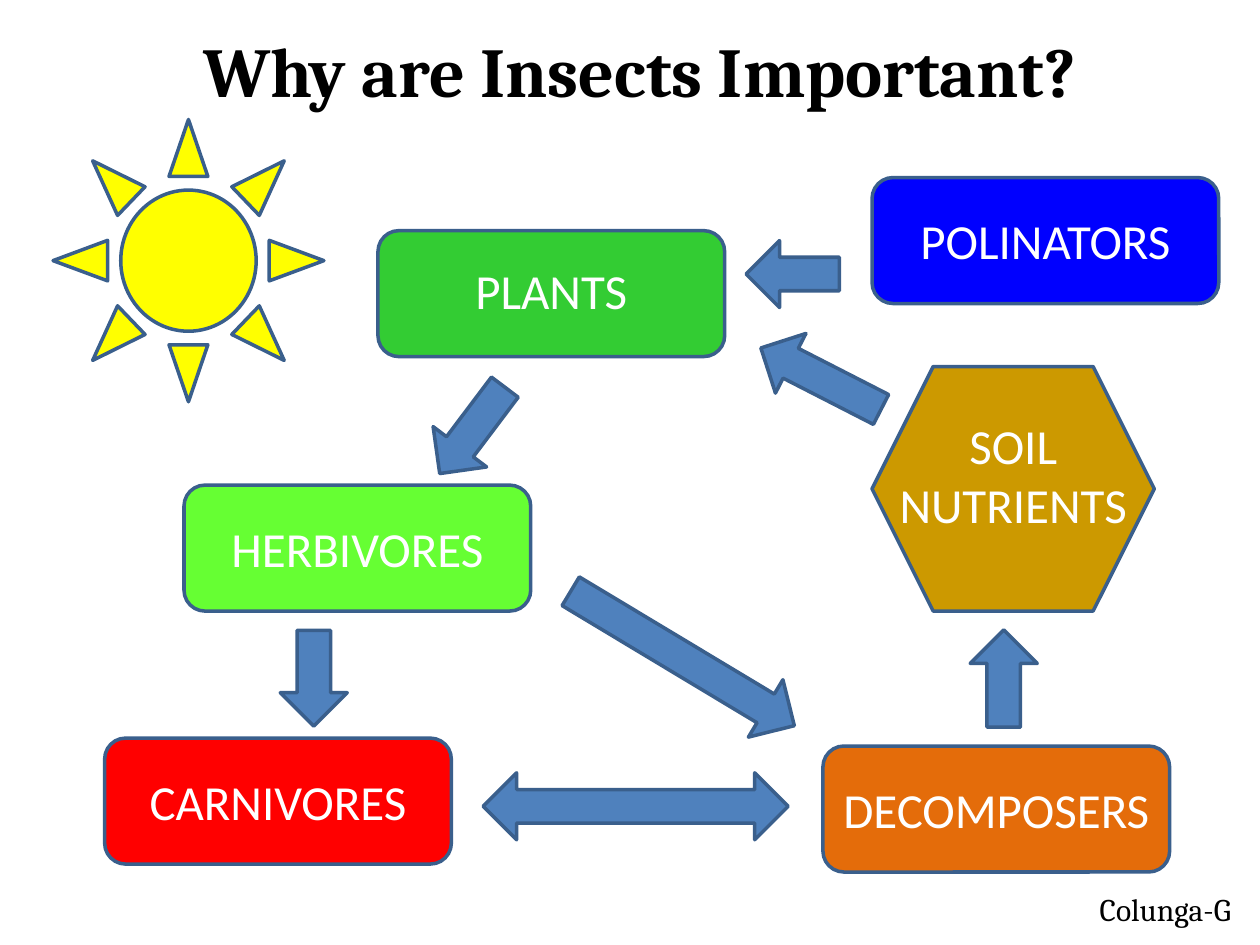
from dataclasses import dataclass

import pptx
import pptx.dml.color
import pptx.enum.shapes
import pptx.enum.text
import pptx.util

Cm = pptx.util.Cm
Pt = pptx.util.Pt
RGBColor = pptx.dml.color.RGBColor
MSO_SHAPE = pptx.enum.shapes.MSO_SHAPE
MSO_ANCHOR = pptx.enum.text.MSO_ANCHOR
PP_ALIGN = pptx.enum.text.PP_ALIGN

BLACK = RGBColor(0x00, 0x00, 0x00)
WHITE = RGBColor(0xFF, 0xFF, 0xFF)
OUTLINE = RGBColor(0x3A, 0x5F, 0x8C)
ARROW_BLUE = RGBColor(0x4F, 0x81, 0xBD)
YELLOW = RGBColor(0xFF, 0xFF, 0x00)
GREEN = RGBColor(0x33, 0xCC, 0x33)
LIME = RGBColor(0x66, 0xFF, 0x33)
RED = RGBColor(0xFF, 0x00, 0x00)
BLUE = RGBColor(0x00, 0x00, 0xFF)
ORANGE = RGBColor(0xE4, 0x6C, 0x0A)
OCHRE = RGBColor(0xCC, 0x99, 0x00)

ARROW_THICKNESS = 1.35


@dataclass
class Node:
    """A labelled part of the food web; lengths in cm."""
    label: str
    left: float
    top: float
    fill: RGBColor
    kind: MSO_SHAPE = MSO_SHAPE.ROUNDED_RECTANGLE
    width: float = 6.99
    height: float = 2.54
    lift: float = 0  # how far the label sits above the middle


@dataclass
class Arrow:
    kind: MSO_SHAPE
    left: float
    top: float
    width: float
    height: float = ARROW_THICKNESS
    rotation: float = 0


NODES = [
    Node("PLANTS", 7.62, 4.65, GREEN, lift=0.08),
    Node("SOIL\nNUTRIENTS", 17.58, 7.39, OCHRE, MSO_SHAPE.HEXAGON, 5.69, 4.93, 0.28),
    Node("HERBIVORES", 3.71, 9.78, LIME),
    Node("DECOMPOSERS", 16.59, 15.04, ORANGE),
    Node("CARNIVORES", 2.11, 14.88, RED),
    Node("POLINATORS", 17.58, 3.58, BLUE),
]

ARROWS = [
    Arrow(MSO_SHAPE.RIGHT_ARROW, 8.43, 8.0, 2.18, rotation=127),
    Arrow(MSO_SHAPE.RIGHT_ARROW, 5.36, 13.0, 1.93, rotation=90),
    Arrow(MSO_SHAPE.RIGHT_ARROW, 11.13, 12.6, 5.26, rotation=31),
    Arrow(MSO_SHAPE.LEFT_RIGHT_ARROW, 9.74, 15.58, 6.15),
    Arrow(MSO_SHAPE.LEFT_ARROW, 15.19, 6.96, 2.72, rotation=27.1),
    Arrow(MSO_SHAPE.LEFT_ARROW, 15.04, 4.85, 1.88),
    Arrow(MSO_SHAPE.UP_ARROW, 19.56, 12.7, ARROW_THICKNESS, 1.96),
]


def add_outlined(slide, kind: MSO_SHAPE, left: float, top: float,
                 width: float, height: float, fill: RGBColor):
    sp = slide.shapes.add_shape(kind, Cm(left), Cm(top), Cm(width), Cm(height))
    sp.shadow.inherit = False
    sp.fill.solid()
    sp.fill.fore_color.rgb = fill
    sp.line.color.rgb = OUTLINE
    sp.line.width = Pt(2)
    return sp


def style_paragraph(p, font: str, size: float, color: RGBColor, align: PP_ALIGN) -> None:
    p.alignment = align
    p.font.name = font
    p.font.size = Pt(size)
    p.font.color.rgb = color


def add_node(slide, node: Node) -> None:
    sp = add_outlined(slide, node.kind, node.left, node.top,
                      node.width, node.height, node.fill)
    tf = sp.text_frame
    tf.word_wrap = False
    tf.vertical_anchor = MSO_ANCHOR.MIDDLE
    tf.margin_bottom = Cm(0.13 + 2 * node.lift)
    tf.text = node.label
    for p in tf.paragraphs:
        style_paragraph(p, "Calibri", 28, WHITE, PP_ALIGN.CENTER)


def add_arrow(slide, arrow: Arrow) -> None:
    sp = add_outlined(slide, arrow.kind, arrow.left, arrow.top,
                      arrow.width, arrow.height, ARROW_BLUE)
    sp.rotation = arrow.rotation


def add_title(slide, text: str) -> None:
    sp = slide.shapes.title
    sp.left, sp.top, sp.width, sp.height = Cm(3.84), Cm(0.43), Cm(18.67), Cm(1.96)
    tf = sp.text_frame
    tf.text = text
    tf.vertical_anchor = MSO_ANCHOR.TOP
    p = tf.paragraphs[0]
    style_paragraph(p, "Cambria", 40, BLACK, PP_ALIGN.LEFT)
    p.font.bold = True


def add_credit(slide, text: str) -> None:
    sp = slide.shapes.add_textbox(Cm(21.92), Cm(17.81), Cm(3.33), Cm(1.02))
    tf = sp.text_frame
    tf.text = text
    style_paragraph(tf.paragraphs[0], "Cambria", 18, BLACK, PP_ALIGN.LEFT)


def main() -> None:
    prs = pptx.Presentation()
    prs.slide_width, prs.slide_height = Cm(25.4), Cm(19.05)
    slide = prs.slides.add_slide(prs.slide_layouts.get_by_name("Title Only"))
    add_title(slide, "Why are Insects Important?")
    add_outlined(slide, MSO_SHAPE.SUN, 1.07, 2.41, 5.46, 5.69, YELLOW)
    for node in NODES:
        add_node(slide, node)
    for arrow in ARROWS:
        add_arrow(slide, arrow)
    add_credit(slide, "Colunga-G")
    prs.save("out.pptx")


if __name__ == "__main__":
    main()
